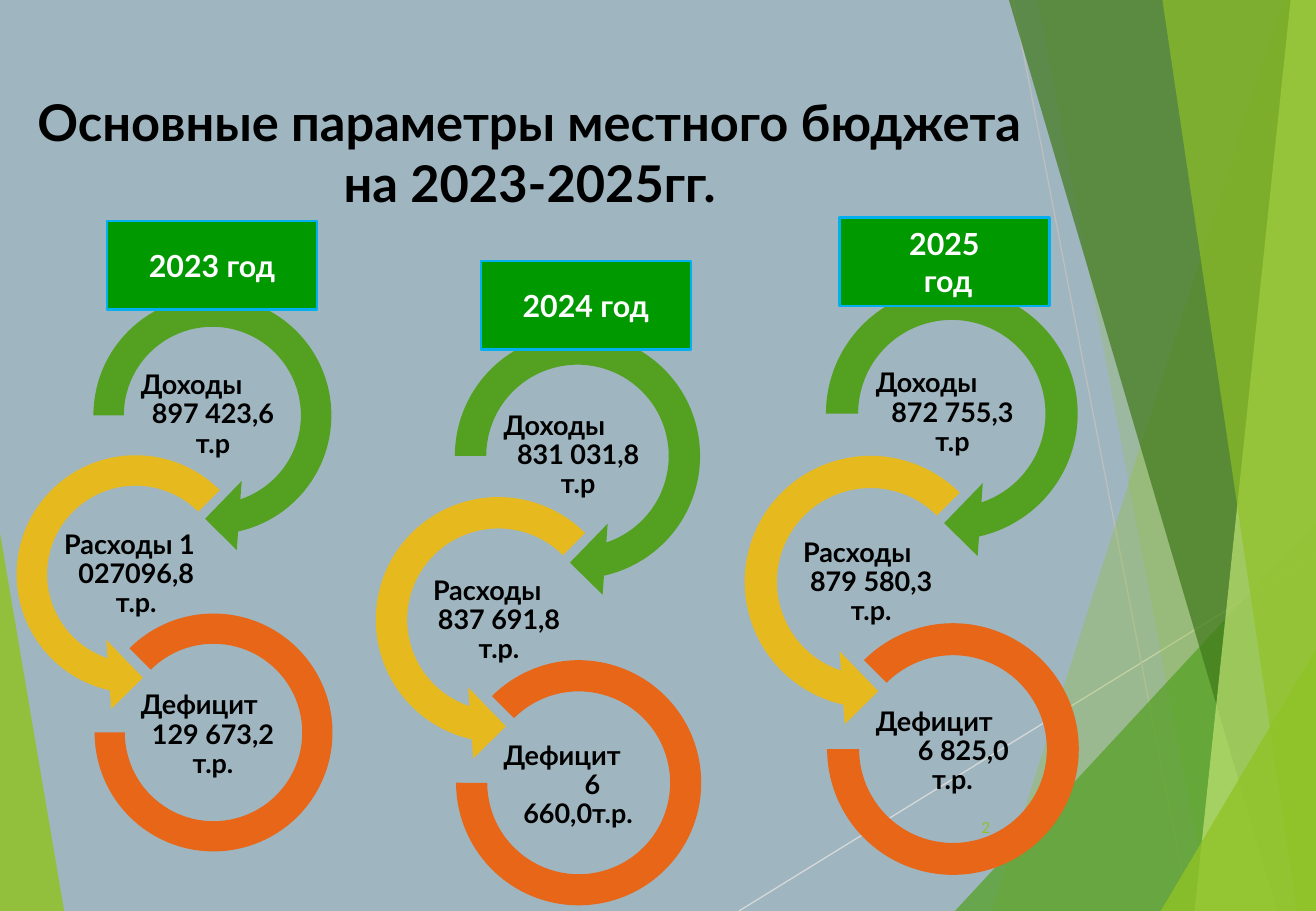
from collections import namedtuple
from dataclasses import dataclass
from lxml.etree import SubElement
from pptx import Presentation
from pptx.dml.color import RGBColor
from pptx.enum.shapes import MSO_CONNECTOR, MSO_SHAPE
from pptx.enum.text import MSO_ANCHOR, PP_ALIGN
from pptx.oxml.ns import qn
from pptx.util import Pt

Box = namedtuple("Box", "left top width height")
# A line of a label: its alignment and left indent in points
Line = namedtuple("Line", "text align indent", defaults=(PP_ALIGN.CENTER, 0))


@dataclass(frozen=True)
class Theme:
    font: str = "Lato"
    background: str = "9FB6C0"
    black: str = "000000"
    white: str = "FFFFFF"
    lime: str = "90C226"
    pale_lime: str = "C0E474"
    green: str = "54A021"
    dark_green: str = "3F7819"
    yellow: str = "E6B91E"
    orange: str = "E76618"
    tag_fill: str = "009900"
    tag_line: str = "00B0F0"
    light_rule: str = "D9D9D9"
    dark_rule: str = "BFBFBF"
    title_size: float = 30
    tag_size: float = 18
    label_size: float = 16
    number_size: float = 9


THEME = Theme()


def points(box):
    return [Pt(value) for value in box]


def paint(shape, color, opacity=100):
    shape.shadow.inherit = False
    shape.fill.solid()
    shape.fill.fore_color.rgb = RGBColor.from_string(color)
    shape.line.fill.background()
    if opacity < 100:
        fill = shape.fill._xPr.find(qn("a:solidFill"))
        SubElement(fill[0], qn("a:alpha"), val=str(opacity * 1000))


def write(shape, lines, size, color, bold=True, anchor=MSO_ANCHOR.MIDDLE, spacing=1.0):
    frame = shape.text_frame
    frame.word_wrap = True
    frame.vertical_anchor = anchor
    frame.text = "\n".join(line.text for line in lines)
    for para, line in zip(frame.paragraphs, lines):
        para.alignment = line.align
        para.line_spacing = spacing
        if line.indent:
            properties = para._p.get_or_add_pPr()
            properties.set("marL", str(Pt(line.indent)))
            properties.set("indent", "0")
        for span in para.runs:
            span.font.name = THEME.font
            span.font.size = Pt(size)
            span.font.bold = bold
            span.font.color.rgb = RGBColor.from_string(color)


def add_facet(page, corners, color, opacity):
    corners = [(Pt(x), Pt(y)) for x, y in corners]
    builder = page.shapes.build_freeform(*corners[0])
    builder.add_line_segments(corners[1:], close=True)
    paint(builder.convert_to_shape(), color, opacity)


def add_rule(page, start, end, color):
    rule = page.shapes.add_connector(MSO_CONNECTOR.STRAIGHT, *points(start + end))
    rule.line.color.rgb = RGBColor.from_string(color)
    rule.line.width = Pt(0.75)
    SubElement(rule._element.spPr, qn("a:effectLst"))


def add_backdrop(page, box):
    right, bottom = box.left + box.width, box.top + box.height
    page.background.fill.solid()
    page.background.fill.fore_color.rgb = RGBColor.from_string(THEME.background)
    # Left wedge and thin rules
    add_facet(page, [(box.left, 316), (38, bottom), (box.left, bottom)], THEME.lime, 85)
    add_rule(page, (438, bottom), (right, 329), THEME.light_rule)
    add_rule(page, (600.5, box.top), (705, bottom), THEME.dark_rule)
    # Facets run from a slanted edge to the right side of the page
    facets = [
        ((760.5, 0), 588, THEME.lime, 30),
        ((615, 0), 717, THEME.lime, 20),
        ((right, 309), 566, THEME.green, 72),
        ((598, 0), 757, THEME.dark_green, 70),
        ((765, 0), 708, THEME.pale_lime, 70),
        ((689, 0), 769, THEME.lime, 65),
        ((right, 385), 688, THEME.lime, 80),
    ]
    for upper, foot, color, opacity in facets:
        corners = [upper, (foot, bottom), (right, bottom), (right, upper[1])]
        add_facet(page, corners, color, opacity)


def add_text(page, box, lines, size, color, **style):
    shape = page.shapes.add_textbox(*points(box))
    write(shape, lines, size, color, **style)
    return shape


def add_cycle(page, box, labels):
    """Three linked arcs; box holds the upper arc, 164 points wide at scale 1."""
    scale = box.width / 164
    # Preset, offset, diameter, adjustments, colour, label offset
    arcs = [
        (MSO_SHAPE.CIRCULAR_ARROW, (0, 0), 164,
         (0.11, 11.42, 45, 108, 0.125), THEME.green, (36.7, 59.2)),
        (MSO_SHAPE.LEFT_CIRCULAR_ARROW, (-45.5, 94.2), 164,
         (0.11, 11.42, 63, 189, 0.125), THEME.yellow, (-8.8, 154)),
        (MSO_SHAPE.BLOCK_ARC, (12.2, 199.5), 141,
         (135, 108, 0.127), THEME.orange, (36.7, 249)),
    ]

    def place(offset, width, height):
        return Box(box.left + offset[0] * scale, box.top + offset[1] * scale,
                   width * scale, height * scale)

    for arc, lines in zip(arcs, labels):
        preset, offset, diameter, adjustments, color, label_offset = arc
        shape = page.shapes.add_shape(preset, *points(place(offset, diameter, diameter)))
        for index, value in enumerate(adjustments):
            shape.adjustments[index] = value
        paint(shape, color)
        label = add_text(page, place(label_offset, 91.3, 45.4), lines,
                         THEME.label_size, THEME.black, spacing=0.9)
        frame = label.text_frame
        frame.margin_left = frame.margin_right = Pt(0.9)
        frame.margin_top = frame.margin_bottom = Pt(0.9)


def add_year_tag(page, box, lines):
    tag = page.shapes.add_shape(MSO_SHAPE.RECTANGLE, *points(box))
    paint(tag, THEME.tag_fill)
    tag.line.color.rgb = RGBColor.from_string(THEME.tag_line)
    tag.line.width = Pt(1.5)
    write(tag, lines, THEME.tag_size, THEME.white)


def heading(text, indent=2):
    return Line(text, PP_ALIGN.LEFT, indent)


# Year lines, tag corner, cycle box, labels for income, spending and deficit
YEARS = [
    ([Line("2023 год")], (63.4, 131), Box(43.9, 164.2, 164, 164), [
        [heading("Доходы"), Line("897 423,6"), Line("т.р")],
        [heading("Расходы 1"), Line("027096,8"), Line("т.р.")],
        [heading("Дефицит"), Line("129 673,2"), Line("т.р.")]]),
    ([Line("2024 год")], (285, 154.8), Box(257.8, 185.8, 169, 169), [
        [heading("Доходы"), Line("831 031,8"), Line("т.р")],
        [heading("Расходы", 7), Line("837 691,8"), Line("т.р.")],
        [heading("Дефицит"), Line("6", indent=17), Line("660,0т.р.")]]),
    ([Line("2025"), Line(" год")], (497.5, 128.9), Box(477.4, 158.4, 173.5, 173.5), [
        [heading("Доходы"), Line("872 755,3"), Line("т.р")],
        [heading("Расходы", 7), Line("879 580,3"), Line("т.р.")],
        [heading("Дефицит"), Line("6 825,0", indent=13), Line("т.р.")]]),
]


def main():
    deck = Presentation()
    deck.slide_width, deck.slide_height = Pt(780), Pt(540)
    page = deck.slides.add_slide(deck.slide_layouts[6])
    add_backdrop(page, Box(0, 0, 780, 540))
    # Title
    add_text(page, Box(6.5, 34.5, 615, 95),
             [Line("Основные параметры местного бюджета на 2023-2025гг.")],
             THEME.title_size, THEME.black, anchor=MSO_ANCHOR.BOTTOM)
    # Cycles first, so that the year tags cover their tops
    for _, _, box, labels in YEARS:
        add_cycle(page, box, labels)
    for lines, corner, _, _ in YEARS:
        add_year_tag(page, Box(*corner, 124.5, 52.5), lines)
    # Page number
    add_text(page, Box(550, 476, 44, 28.8), [Line("2", PP_ALIGN.RIGHT)],
             THEME.number_size, THEME.lime, bold=False)
    deck.save("out.pptx")


if __name__ == "__main__":
    main()
